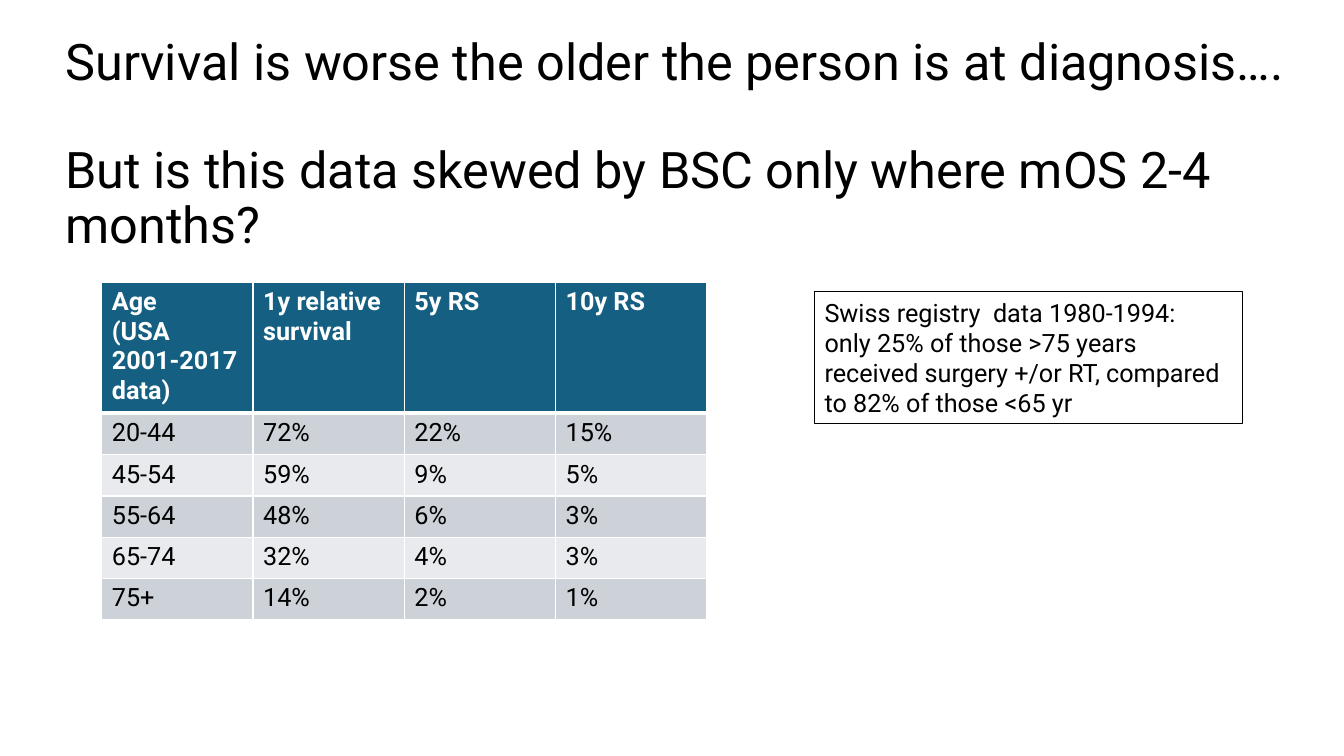
from dataclasses import dataclass

from lxml import etree
from pptx import Presentation
from pptx.dml.color import RGBColor
from pptx.enum.shapes import MSO_SHAPE
from pptx.enum.text import MSO_ANCHOR, PP_ALIGN
from pptx.oxml.ns import qn
from pptx.util import Inches, Pt

RECT = MSO_SHAPE.RECTANGLE
MIDDLE = MSO_ANCHOR.MIDDLE
LEFT = PP_ALIGN.LEFT

TITLE = [
    "Survival is worse the older the person is at diagnosis….",
    "But is this data skewed by BSC only where mOS 2-4 months?",
]
SURVIVAL = [
    ("Age\n(USA 2001-2017 data)", "1y relative survival", "5y RS", "10y RS"),
    ("20-44", "72%", "22%", "15%"),
    ("45-54", "59%", "9%", "5%"),
    ("55-64", "48%", "6%", "3%"),
    ("65-74", "32%", "4%", "3%"),
    ("75+", "14%", "2%", "1%"),
]
NOTE = [
    "Swiss registry  data 1980-1994:",
    "only 25% of those >75 years received surgery +/or RT, compared to 82% of those <65 yr",
]

SLIDE_W, SLIDE_H = 13.33, 7.5
TITLE_BOX = (0.55, 0.4, 12.5, 2.09)
NOTE_BOX = (8.08, 2.89, 4.24, 1.31)
TABLE_LEFT, TABLE_TOP = 1.01, 2.8
COL_W, HEAD_H, ROW_H = 1.5, 0.96, 0.41


@dataclass(frozen=True)
class Theme:
    font: str = "Roboto"
    title: int = 36
    body: int = 18
    ink: str = "000000"
    paper: str = "FFFFFF"
    head: str = "156082"
    bands: tuple = ("CCD2D8", "E8EAED")


T = Theme()


def write(tf, lines, size, color, bold=False):
    tf.word_wrap = True
    tf.text = "\n".join(lines)
    for p in tf.paragraphs:
        p.alignment = LEFT
        for r in p.runs:
            r.font.name = T.font
            r.font.size = Pt(size)
            r.font.bold = bold
            r.font.color.rgb = RGBColor.from_string(color)


def border(cell, widths):
    tcPr = cell._tc.get_or_add_tcPr()
    for i, (side, width) in enumerate(widths.items()):
        ln = etree.Element(qn(f"a:ln{side}"), w=str(Pt(width)))
        fill = etree.SubElement(ln, qn("a:solidFill"))
        etree.SubElement(fill, qn("a:srgbClr"), val=T.paper)
        tcPr.insert(i, ln)


def add_title(s):
    tf = s.shapes.add_textbox(*map(Inches, TITLE_BOX)).text_frame
    write(tf, TITLE, T.title, T.ink)
    tf.vertical_anchor = MIDDLE
    for p in tf.paragraphs:
        p.line_spacing = 0.9
    tf.paragraphs[1].space_before = Pt(38)


def add_survival_table(s):
    rows, cols = len(SURVIVAL), len(SURVIVAL[0])
    size = (cols * COL_W, HEAD_H + (rows - 1) * ROW_H)
    box = map(Inches, (TABLE_LEFT, TABLE_TOP, *size))
    table = s.shapes.add_table(rows, cols, *box).table
    for col in table.columns:
        col.width = Inches(COL_W)
    for i, values in enumerate(SURVIVAL):
        head = i == 0
        table.rows[i].height = Inches(HEAD_H if head else ROW_H)
        fill = T.head if head else T.bands[(i - 1) % 2]
        widths = {"L": 1, "R": 1, "T": 3 if i == 1 else 1, "B": 3 if head else 1}
        for j, value in enumerate(values):
            cell = table.cell(i, j)
            write(cell.text_frame, [value], T.body, T.paper if head else T.ink, head)
            cell.fill.solid()
            cell.fill.fore_color.rgb = RGBColor.from_string(fill)
            border(cell, widths)


def add_note(s):
    sp = s.shapes.add_shape(RECT, *map(Inches, NOTE_BOX))
    sp.shadow.inherit = False
    sp.fill.background()
    sp.line.color.rgb = RGBColor.from_string(T.ink)
    sp.line.width = Pt(0.75)
    write(sp.text_frame, NOTE, T.body, T.ink)


def main():
    prs = Presentation()
    prs.slide_width, prs.slide_height = Inches(SLIDE_W), Inches(SLIDE_H)
    s = prs.slides.add_slide(prs.slide_layouts[6])
    add_title(s)
    add_survival_table(s)
    add_note(s)
    prs.save("out.pptx")


if __name__ == "__main__":
    main()
